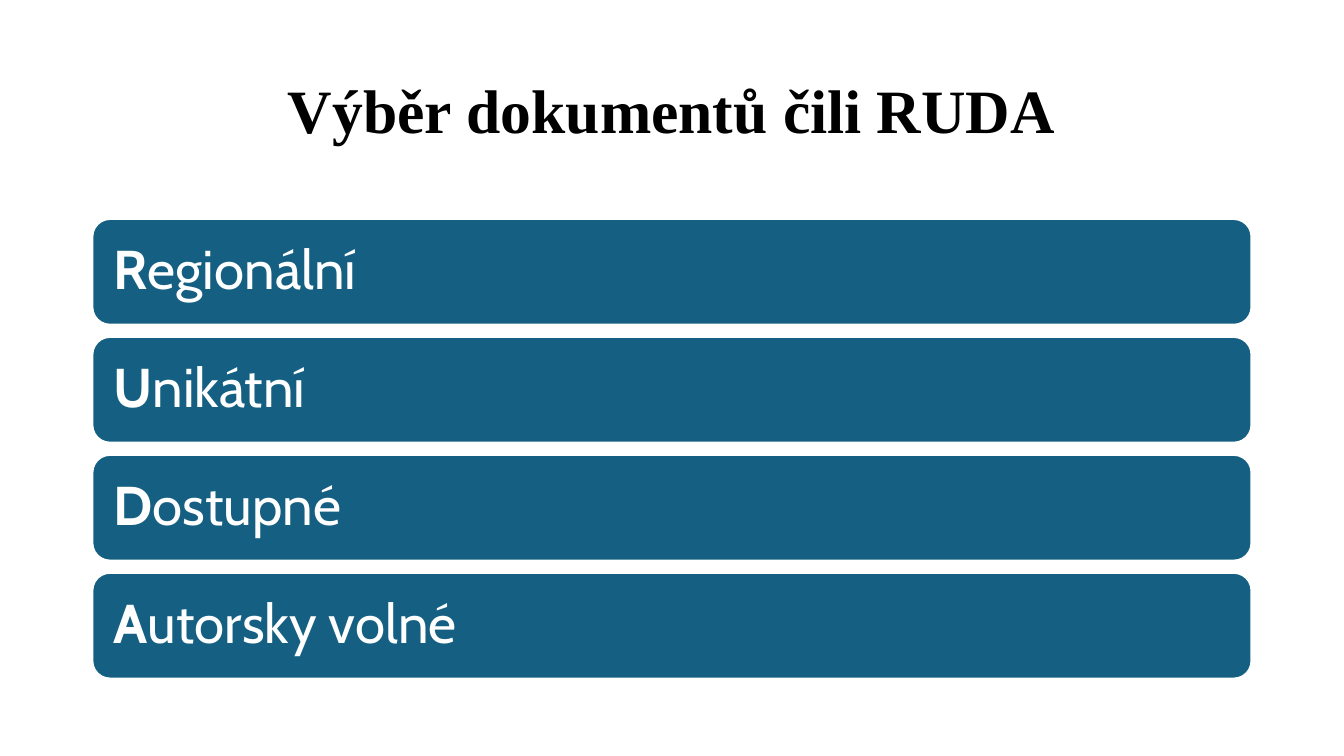
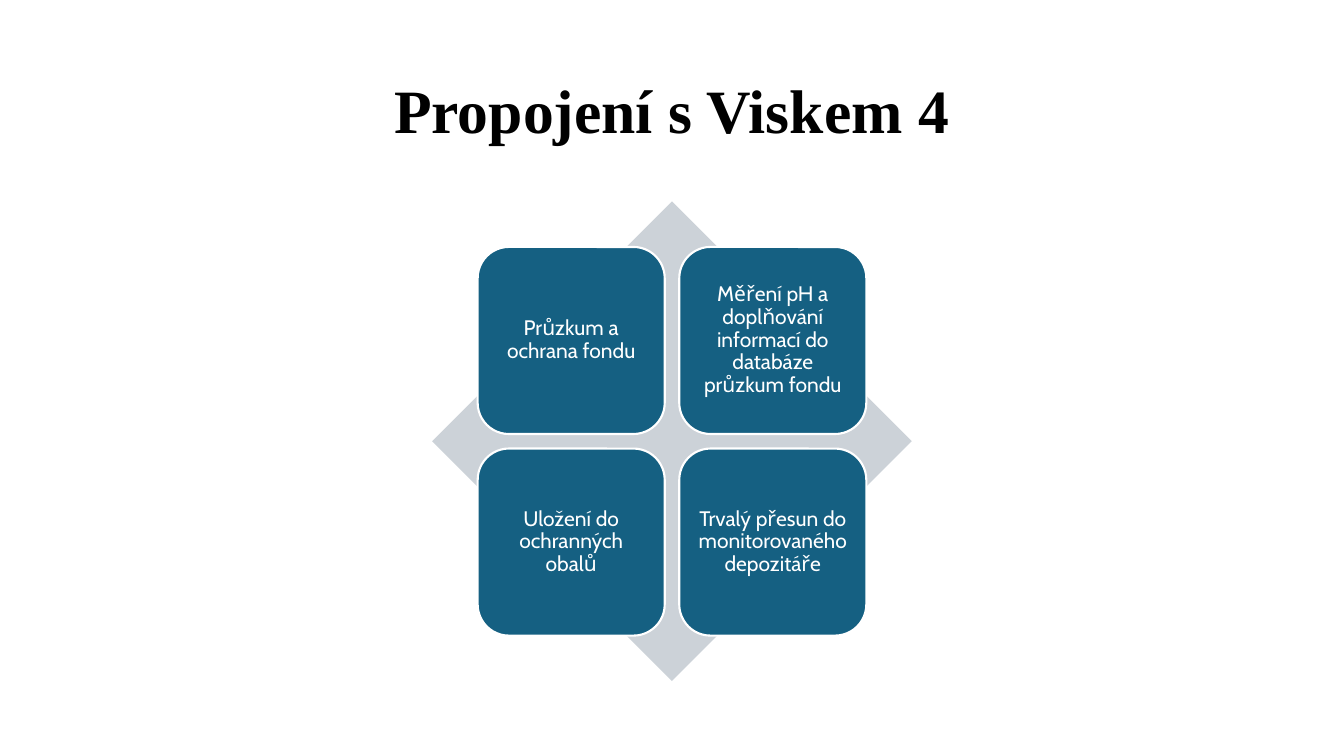
"""Build two slides: the RUDA selection bars and the Visk 4 diamond matrix."""
from dataclasses import dataclass

from pptx import Presentation
from pptx.dml.color import RGBColor as RGB
from pptx.enum.shapes import MSO_SHAPE as Shape
from pptx.enum.text import MSO_ANCHOR as Anchor, PP_ALIGN as Align
from pptx.util import Pt


@dataclass(frozen=True)
class Theme:
    blue: RGB = RGB(0x15, 0x60, 0x82)
    grey: RGB = RGB(0xCC, 0xD2, 0xD8)
    white: RGB = RGB(0xFF, 0xFF, 0xFF)
    black: RGB = RGB(0, 0, 0)
    title_font: str = "Times New Roman"
    body_font: str = "Cabin"
    title_size: float = 44
    bar_size: float = 39
    card_size: float = 15
    outline: float = 1.5
    line_spacing: float = 0.9


@dataclass(frozen=True)
class Box:
    x: float
    y: float
    w: float
    h: float

    def lengths(self) -> tuple:
        return Pt(self.x), Pt(self.y), Pt(self.w), Pt(self.h)


@dataclass(frozen=True)
class Tile:
    box: Box
    text: str
    size: float
    inset: float
    align: Align
    bold_initial: bool = False


THEME = Theme()
SLIDE_W, SLIDE_H = 960, 540
MARGIN = 66
CONTENT_W = SLIDE_W - 2 * MARGIN
TITLE_BOX = Box(MARGIN, 28.8, CONTENT_W, 104.4)

BAR_TOP, BAR_H, BAR_PITCH = 156.4, 75.6, 84.24
BARS = ("Regionální", "Unikátní", "Dostupné", "Autorsky volné")

CENTER_X, CENTER_Y = SLIDE_W / 2, 315.2
DIAMOND, CARD, CARD_PITCH = 342.6, 133.6, 144
CARDS = (
    "Průzkum a ochrana fondu",
    "Měření pH a doplňování informací do databáze průzkum fondu",
    "Uložení do ochranných obalů",
    "Trvalý přesun do monitorovaného depozitáře",
)


def style_run(r, font: str, size: float, color: RGB, bold: bool) -> None:
    r.font.name, r.font.size, r.font.bold = font, Pt(size), bold
    r.font.color.rgb = color


def add_title_slide(prs, title: str):
    s = prs.slides.add_slide(prs.slide_layouts[6])
    tf = s.shapes.add_textbox(*TITLE_BOX.lengths()).text_frame
    tf.word_wrap = True
    tf.vertical_anchor = Anchor.MIDDLE
    tf.text = title
    p = tf.paragraphs[0]
    p.alignment, p.line_spacing = Align.CENTER, THEME.line_spacing
    style_run(p.runs[0], THEME.title_font, THEME.title_size, THEME.black, True)
    return s


def add_filled(s, kind: Shape, box: Box, fill: RGB):
    sp = s.shapes.add_shape(kind, *box.lengths())
    sp.shadow.inherit = False
    sp.fill.solid()
    sp.fill.fore_color.rgb = fill
    sp.line.fill.background()
    return sp


def add_tile(s, tile: Tile) -> None:
    sp = add_filled(s, Shape.ROUNDED_RECTANGLE, tile.box, THEME.blue)
    sp.line.color.rgb = THEME.white
    sp.line.width = Pt(THEME.outline)
    tf = sp.text_frame
    tf.word_wrap = True
    tf.vertical_anchor = Anchor.MIDDLE
    tf.margin_left = tf.margin_right = Pt(tile.inset)
    tf.margin_top = tf.margin_bottom = Pt(tile.inset)
    p = tf.paragraphs[0]
    p.alignment, p.line_spacing = tile.align, THEME.line_spacing
    if tile.bold_initial:
        p.text = tile.text[0]
        p.add_run().text = tile.text[1:]
    else:
        p.text = tile.text
    for i, r in enumerate(p.runs):
        bold = tile.bold_initial and i == 0
        style_run(r, THEME.body_font, tile.size, THEME.white, bold)


def build_bars(prs) -> None:
    s = add_title_slide(prs, "Výběr dokumentů čili RUDA")
    for i, text in enumerate(BARS):
        box = Box(MARGIN, BAR_TOP + i * BAR_PITCH, CONTENT_W, BAR_H)
        add_tile(s, Tile(box, text, THEME.bar_size, 11.5, Align.LEFT, True))


def build_matrix(prs) -> None:
    s = add_title_slide(prs, "Propojení s Viskem 4")
    diamond = Box(CENTER_X - DIAMOND / 2, CENTER_Y - DIAMOND / 2, DIAMOND, DIAMOND)
    add_filled(s, Shape.DIAMOND, diamond, THEME.grey)
    offset = (CARD_PITCH + CARD) / 2
    for i, text in enumerate(CARDS):
        row, col = divmod(i, 2)
        x = CENTER_X - offset + col * CARD_PITCH
        y = CENTER_Y - offset + row * CARD_PITCH
        box = Box(x, y, CARD, CARD)
        add_tile(s, Tile(box, text, THEME.card_size, 4.5, Align.CENTER))


def main() -> None:
    prs = Presentation()
    prs.slide_width, prs.slide_height = Pt(SLIDE_W), Pt(SLIDE_H)
    build_bars(prs)
    build_matrix(prs)
    prs.save("out.pptx")


if __name__ == "__main__":
    main()
